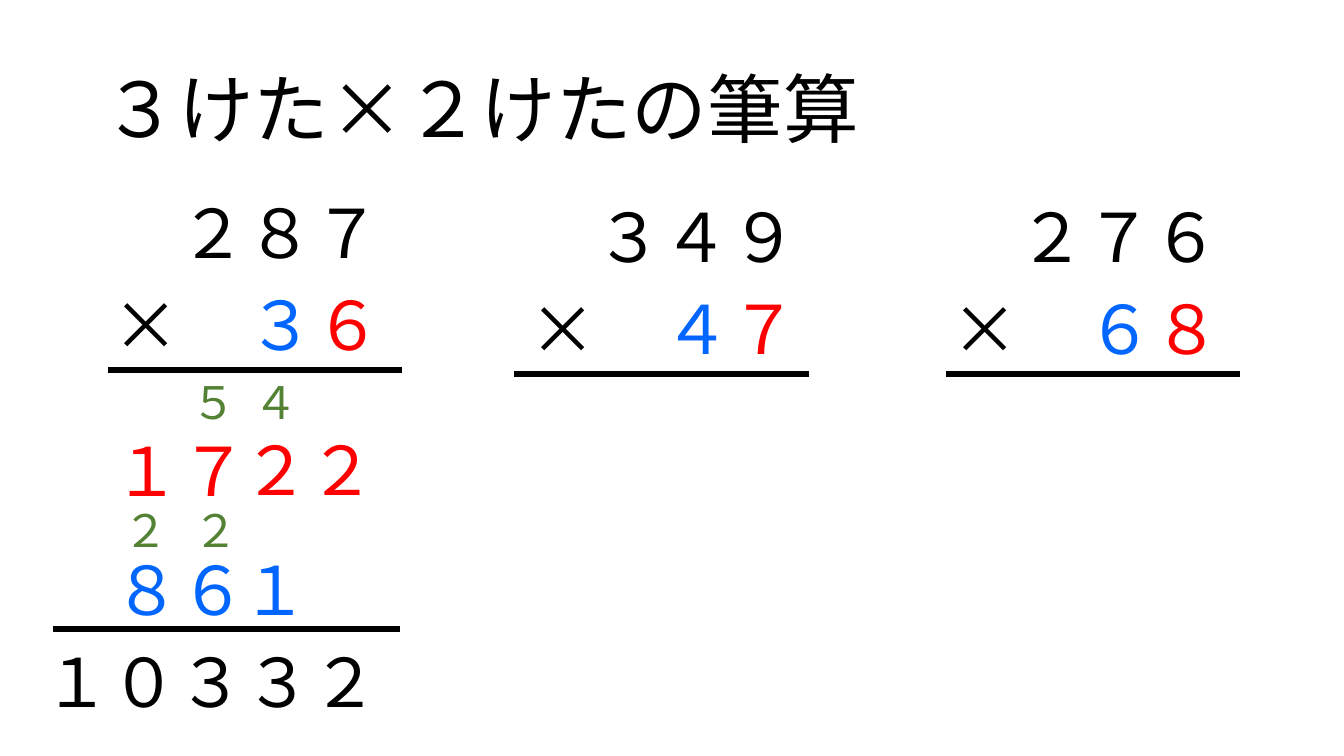
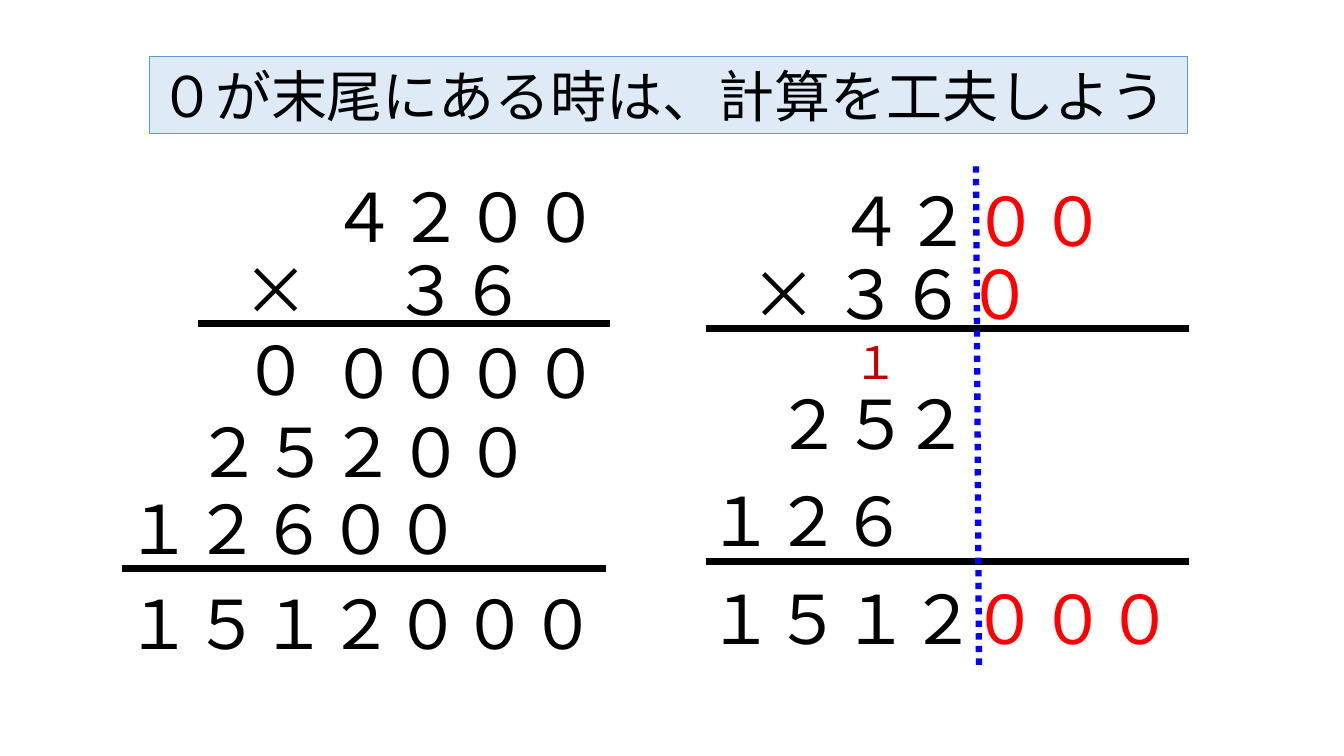
from lxml.etree import SubElement
from pptx import Presentation
from pptx.dml.color import RGBColor
from pptx.enum.dml import MSO_LINE
from pptx.enum.shapes import MSO_CONNECTOR, MSO_SHAPE
from pptx.enum.text import MSO_ANCHOR, MSO_AUTO_SIZE, PP_ALIGN
from pptx.oxml.ns import qn
from pptx.util import Inches, Pt

FONT = "Noto Sans CJK JP"
BLACK = RGBColor(0x00, 0x00, 0x00)
RED = RGBColor(0xFF, 0x00, 0x00)
DARK_RED = RGBColor(0xC0, 0x00, 0x00)
BLUE = RGBColor(0x00, 0x66, 0xFF)
GUIDE_BLUE = RGBColor(0x00, 0x00, 0xFF)
GREEN = RGBColor(0x54, 0x82, 0x35)
PALE_BLUE = RGBColor(0xDE, 0xEB, 0xF7)
BORDER_BLUE = RGBColor(0x5B, 0x9B, 0xD5)

DIGIT, CARRY = 48, 32  # text sizes in points
BOX_HEIGHT = {DIGIT: 0.91, CARRY: 0.64}

# Slide 1: multiplicand, tens digit, ones digit, left and top of the × row, rule start
TITLE = "３けた×２けたの筆算"
PROBLEMS = [
    ("２８７", "３", "６", 1.02, 2.76, 1.07),
    ("３４９", "４", "７", 5.15, 2.80, 5.10),
    ("２７６", "６", "８", 9.34, 2.80, 9.38),
]
RULE_LENGTH = 2.92

# Rows of digits: left, top, width, size, (text, colour) runs
WORKING = [
    (1.03, 4.21, 1.56, DIGIT, [("１７", RED)]),
    (2.31, 4.20, 0.80, DIGIT, [("２", RED)]),
    (2.96, 4.20, 0.80, DIGIT, [("２", RED)]),
    (1.80, 3.67, 0.64, CARRY, [("５", GREEN)]),
    (2.42, 3.67, 0.64, CARRY, [("４", GREEN)]),
    (1.13, 4.94, 0.64, CARRY, [("２", GREEN)]),
    (1.82, 4.94, 0.64, CARRY, [("２", GREEN)]),
    (1.03, 5.39, 0.80, DIGIT, [("８", BLUE)]),
    (1.68, 5.39, 0.80, DIGIT, [("６", BLUE)]),
    (2.30, 5.39, 0.80, DIGIT, [("１", BLUE)]),
    (0.33, 6.30, 3.66, DIGIT, [("１０３３２", BLACK)]),
]
SUM_RULE = (0.53, 3.97, 6.24)

# Slide 2
BANNER = "０が末尾にある時は、計算を工夫しよう"
LONG_METHOD = [
    (3.18, 1.69, 2.96, DIGIT, [("４２００", BLACK)]),
    (2.31, 2.41, 3.60, DIGIT, [("× 　３６０", BLACK)]),
    (3.18, 3.24, 2.96, DIGIT, [("００００", BLACK)]),
    (1.84, 4.02, 3.65, DIGIT, [("２５２００", BLACK)]),
    (1.15, 4.79, 3.65, DIGIT, [("１２６００", BLACK)]),
    (1.15, 5.73, 4.99, DIGIT, [("１５１２０００", BLACK)]),
]
SHORT_METHOD = [
    (8.21, 1.73, 2.96, DIGIT, [("４２", BLACK), ("００", RED)]),
    (7.34, 2.45, 3.11, DIGIT, [("× ３６", BLACK), ("０", RED)]),
    (8.37, 3.27, 0.64, CARRY, [("１", DARK_RED)]),
    (7.59, 3.74, 1.59, DIGIT, [("２５", BLACK)]),
    (8.85, 3.74, 0.80, DIGIT, [("２", BLACK)]),
    (6.92, 4.71, 1.56, DIGIT, [("１２", BLACK)]),
    (8.24, 4.71, 0.80, DIGIT, [("６", BLACK)]),
    (6.92, 5.68, 2.96, DIGIT, [("１５１２", BLACK)]),
    (9.54, 5.68, 2.25, DIGIT, [("０００", RED)]),
]
# Left end, right end, height of each rule
RULES = [(1.96, 6.05, 3.21), (1.21, 6.01, 5.64), (7, 11.79, 3.26), (7, 11.79, 5.57)]


def write_runs(shape, runs, size):
    frame = shape.text_frame
    paragraph = frame.paragraphs[0]
    for text, color in runs:
        run = paragraph.add_run()
        run.text = text
        run.font.size = Pt(size)
        run.font.name = FONT
        run.font.color.rgb = color
        east_asian = SubElement(run.font._element, qn("a:ea"))
        east_asian.set("typeface", FONT)
    return frame


def add_digits(slide, left, top, width, size, runs):
    box = slide.shapes.add_textbox(
        Inches(left), Inches(top), Inches(width), Inches(BOX_HEIGHT[size]))
    frame = write_runs(box, runs, size)
    frame.word_wrap = True
    frame.auto_size = MSO_AUTO_SIZE.SHAPE_TO_FIT_TEXT


def add_line(slide, x1, y1, x2, y2, color=BLACK, dash=None):
    line = slide.shapes.add_connector(
        MSO_CONNECTOR.STRAIGHT, Inches(x1), Inches(y1), Inches(x2), Inches(y2))
    line.line.color.rgb = color
    line.line.width = Pt(4.5)
    if dash:
        line.line.dash_style = dash
    SubElement(line._element.spPr, qn("a:effectLst"))


def add_rule(slide, left, right, height):
    add_line(slide, left, height, right, height)


def build_three_digit_slide(slide):
    title = slide.shapes.add_textbox(Inches(0.92), Inches(0.4), Inches(11.5), Inches(1.45))
    frame = write_runs(title, [(TITLE, BLACK)], 54)
    frame.word_wrap = True
    frame.vertical_anchor = MSO_ANCHOR.MIDDLE
    frame.paragraphs[0].line_spacing = 0.9

    # The three problems; the ones digit wraps below the rule
    for number, tens, ones, left, top, rule_left in PROBLEMS:
        add_digits(slide, left + 0.66, top - 0.91, 2.21, DIGIT, [(number, BLACK)])
        add_digits(slide, left, top, 2.97, DIGIT,
                   [("×　", BLACK), (tens, BLUE), (ones, RED)])
        add_rule(slide, rule_left, rule_left + RULE_LENGTH, top + 0.91)

    # Worked answer to the first problem
    for row in WORKING:
        add_digits(slide, *row)
    add_rule(slide, *SUM_RULE)


def build_trailing_zero_slide(slide):
    for row in LONG_METHOD + SHORT_METHOD:
        add_digits(slide, *row)
    for rule in RULES:
        add_rule(slide, *rule)

    # Guide that cuts off the zeros
    add_line(slide, 9.68, 1.65, 9.71, 6.64, GUIDE_BLUE, MSO_LINE.ROUND_DOT)

    # Banner
    banner = slide.shapes.add_shape(
        MSO_SHAPE.RECTANGLE, Inches(1.48), Inches(0.56), Inches(10.3), Inches(0.77))
    banner.shadow.inherit = False
    banner.fill.solid()
    banner.fill.fore_color.rgb = PALE_BLUE
    banner.line.color.rgb = BORDER_BLUE
    banner.line.width = Pt(0.75)
    frame = write_runs(banner, [(BANNER, BLACK)], 40)
    frame.word_wrap = False
    frame.vertical_anchor = MSO_ANCHOR.TOP
    frame.auto_size = MSO_AUTO_SIZE.SHAPE_TO_FIT_TEXT
    frame.paragraphs[0].alignment = PP_ALIGN.LEFT


def main():
    presentation = Presentation()
    presentation.slide_width, presentation.slide_height = Inches(13.33), Inches(7.5)
    blank = presentation.slide_layouts[6]
    for build in (build_three_digit_slide, build_trailing_zero_slide):
        build(presentation.slides.add_slide(blank))
    presentation.save("out.pptx")


if __name__ == "__main__":
    main()
